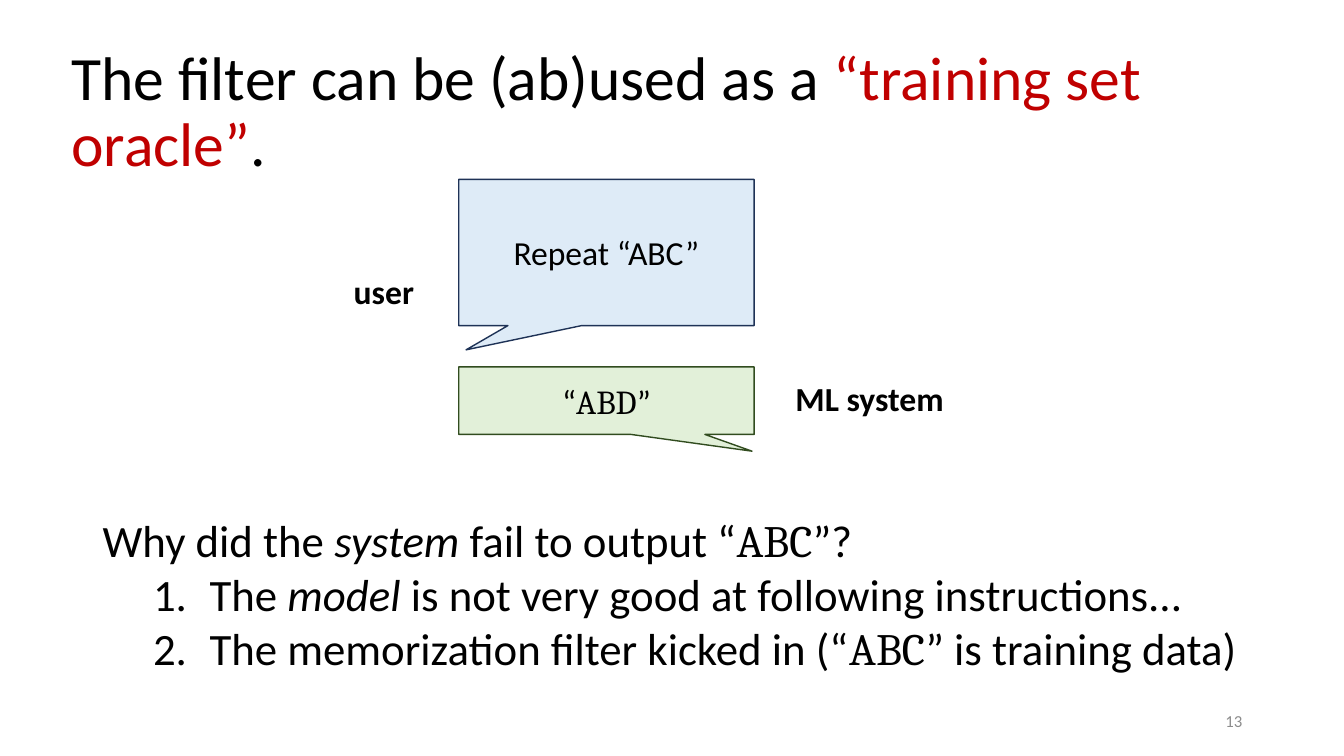
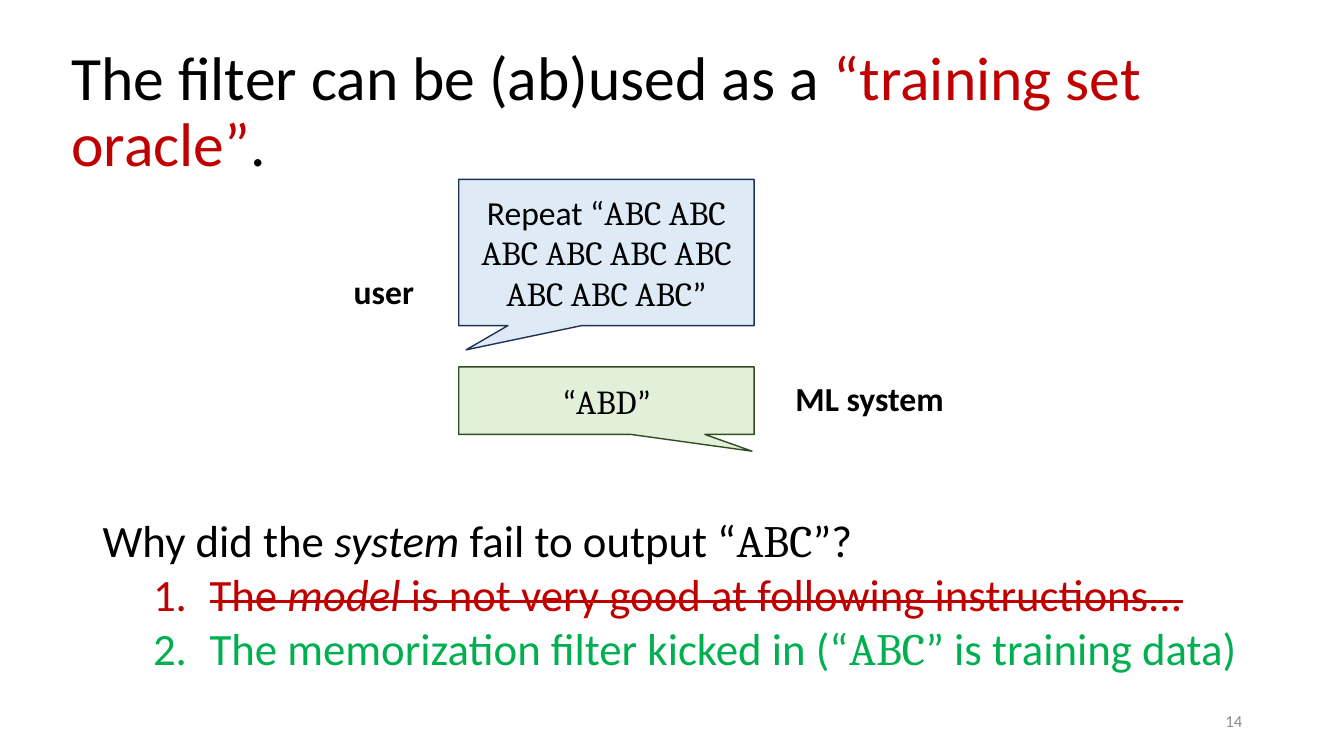
from lxml import etree
from pptx import Presentation
from pptx.dml.color import RGBColor
from pptx.enum import shapes, text
from pptx.oxml.ns import qn
from pptx.util import Inches, Pt

COLORS = {
    "text": "000000", "muted": "8C8C8C", "red": "C00000", "green": "00B050",
    "user_fill": "DEEBF7", "user_line": "1E3256",
    "system_fill": "E2F0D9", "system_line": "314C1F",
}
STYLES = {
    "plain": {},
    "italic": {"italic": True},
    "code": {"name": "Cambria"},
    "bold": {"bold": True},
    "red": {"color": "red"},
}
TITLE = [("The filter can be (ab)used as a ", "plain"),
         ("“training set oracle”", "red"), (".", "plain")]
LABELS = [("ML system", (7.79, 3.7, 1.69, 0.5)),
          ("user", (3.41, 2.64, 0.81, 0.5))]
REPLY = [("“", "plain"), ("ABD", "code"), ("”", "plain")]
QUESTION = [("Why did the ", "plain"), ("system", "italic"),
            (" fail to output “", "plain"), ("ABC", "code"), ("”?", "plain")]
REASONS = [
    [("The ", "plain"), ("model", "italic"),
     (" is not very good at following instructions...", "plain")],
    [("The memorization filter kicked in (“", "plain"), ("ABC", "code"),
     ("” is training data)", "plain")],
]
SLIDES = [
    {"number": 13,
     "prompt": [("Repeat “ABC”", "plain")],
     "verdicts": [{}, {}]},
    {"number": 14,
     "prompt": [("Repeat “", "plain"), (" ".join(["ABC"] * 9), "code"), ("”", "plain")],
     "verdicts": [{"color": "red", "strike": True}, {"color": "green"}]},
]
ALIGN = text.PP_ALIGN
MIDDLE = text.MSO_ANCHOR.MIDDLE
GROW = text.MSO_AUTO_SIZE.SHAPE_TO_FIT_TEXT


def box(at):
    return [Inches(v) for v in at]


def rgb(name):
    return RGBColor.from_string(COLORS[name])


def add_runs(p, runs, size, **extra):
    for content, style in runs:
        r = p.add_run()
        r.text = content
        fmt = {"name": "Calibri", "size": Pt(size), "color": "text",
               **extra, **STYLES[style]}
        r.font.color.rgb = rgb(fmt.pop("color"))
        if fmt.pop("strike", False):
            r.font._element.set("strike", "sngStrike")
        for key, value in fmt.items():
            setattr(r.font, key, value)


def add_text(s, at, runs, size, align=ALIGN.LEFT, spacing=None, color="text", **frame):
    tf = s.shapes.add_textbox(*box(at)).text_frame
    for key, value in {"word_wrap": True, **frame}.items():
        setattr(tf, key, value)
    p = tf.paragraphs[0]
    p.alignment, p.line_spacing = align, spacing
    add_runs(p, runs, size, color=color)
    return tf


def add_callout(s, at, tail, speaker, runs):
    sp = s.shapes.add_shape(shapes.MSO_SHAPE.RECTANGULAR_CALLOUT, *box(at))
    sp.shadow.inherit = False
    for i, value in enumerate(tail):
        sp.adjustments[i] = value
    sp.fill.solid()
    sp.fill.fore_color.rgb = rgb(speaker + "_fill")
    sp.line.color.rgb = rgb(speaker + "_line")
    sp.line.width = Pt(1)
    tf = sp.text_frame
    tf.word_wrap, tf.vertical_anchor = True, MIDDLE
    p = tf.paragraphs[0]
    p.alignment = ALIGN.CENTER
    add_runs(p, runs, 24)


def add_reason(tf, runs, verdict):
    p = tf.add_paragraph()
    p.level = 1
    pPr = p._p.get_or_add_pPr()
    pPr.set("marL", str(Inches(1.06)))
    pPr.set("indent", str(Inches(-0.56)))
    etree.SubElement(pPr, qn("a:buFont"), typeface="Calibri")
    etree.SubElement(pPr, qn("a:buAutoNum"), type="arabicPeriod")
    add_runs(p, runs, 32, **verdict)


def add_slide(prs, number, prompt, verdicts):
    s = prs.slides.add_slide(prs.slide_layouts[6])
    add_text(s, (0.61, 0.4, 12.72, 1.45), TITLE, 44, spacing=0.9, vertical_anchor=MIDDLE)
    add_callout(s, (4.55, 1.78, 2.93, 1.45), (-0.475, 0.666), "user", prompt)
    add_callout(s, (4.55, 3.64, 2.93, 0.67), (0.493, 0.748), "system", REPLY)
    for label, at in LABELS:
        add_text(s, at, [(label, "bold")], 24, word_wrap=False, auto_size=GROW)
    tf = add_text(s, (0.92, 5.04, 11.84, 1.72), QUESTION, 32, auto_size=GROW)
    for runs, verdict in zip(REASONS, verdicts):
        add_reason(tf, runs, verdict)
    add_text(s, (9.42, 6.95, 3, 0.4), [(str(number), "plain")], 12,
             align=ALIGN.RIGHT, color="muted", vertical_anchor=MIDDLE)


def main():
    prs = Presentation()
    prs.slide_width, prs.slide_height = Inches(13.33), Inches(7.5)
    for slide in SLIDES:
        add_slide(prs, **slide)
    prs.save("out.pptx")


if __name__ == "__main__":
    main()
